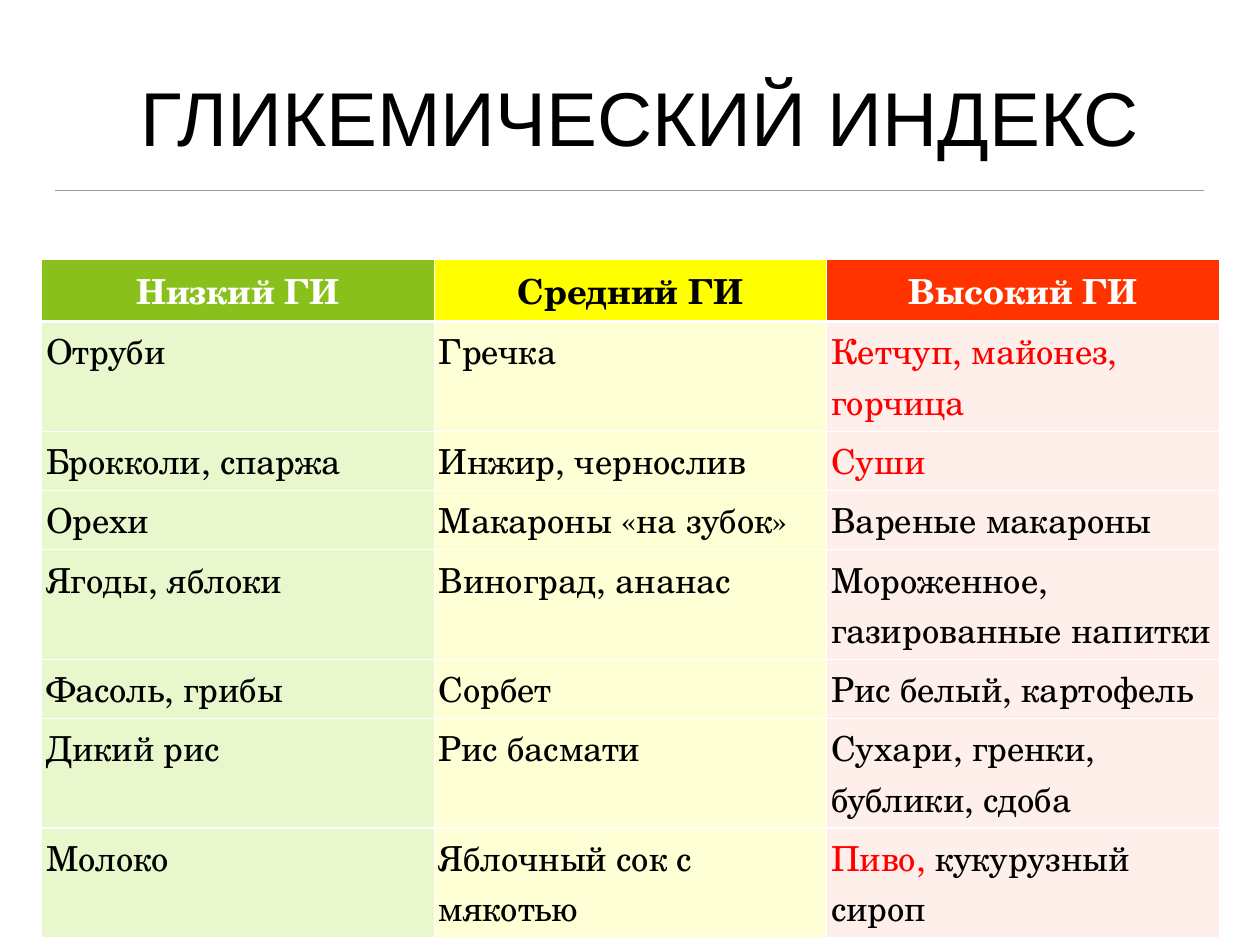
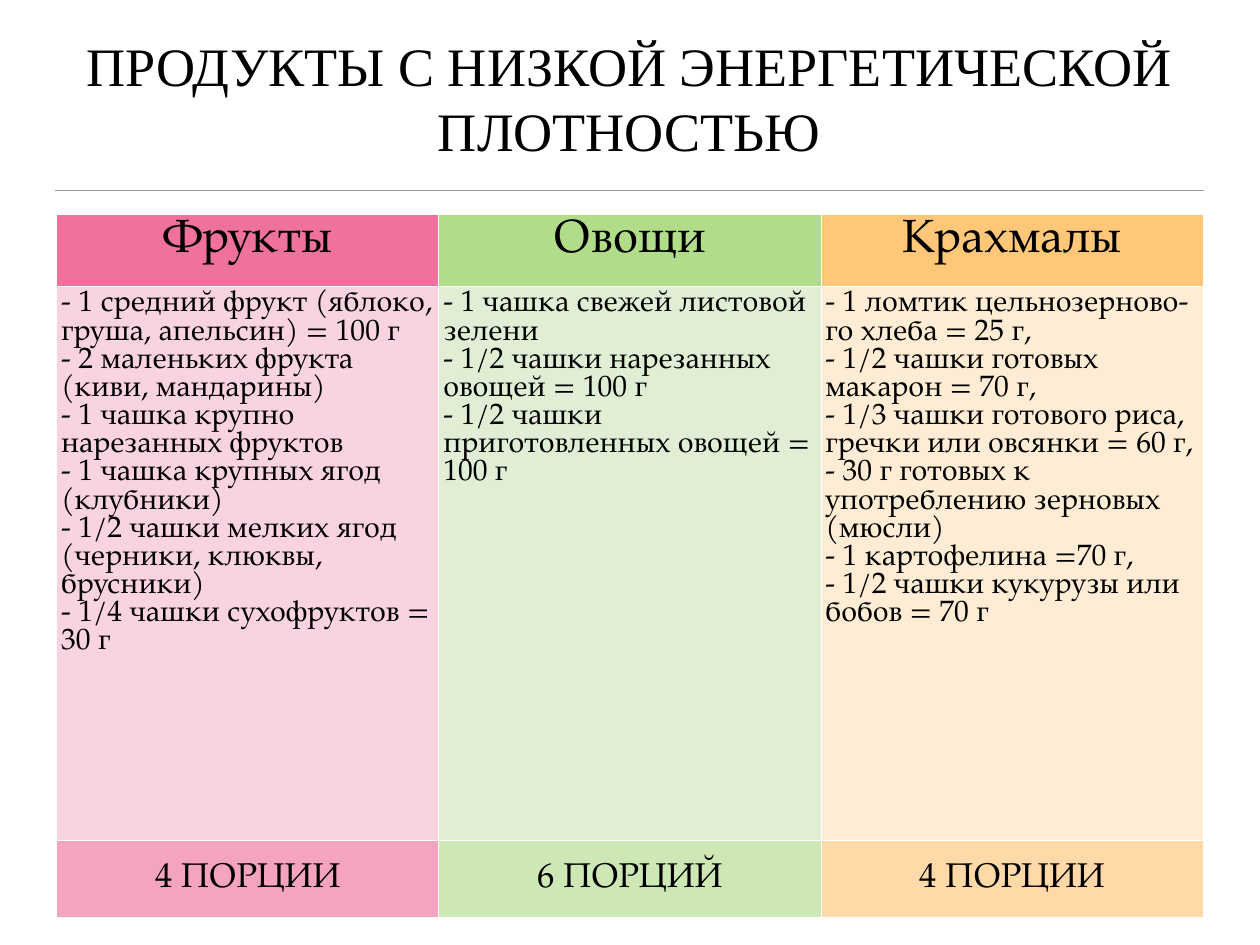
from lxml.etree import SubElement
from pptx import Presentation
from pptx.dml.color import RGBColor
from pptx.enum.shapes import MSO_CONNECTOR
from pptx.enum.text import MSO_ANCHOR, MSO_AUTO_SIZE, PP_ALIGN
from pptx.oxml.ns import qn
from pptx.util import Emu, Pt

SCALE = 9144
COLORS = {
    "black": "000000", "white": "FFFFFF", "red": "FF0000", "rule": "9A9A9A",
    "low": "89C01C", "low_pale": "E9F8CC",
    "medium": "FFFF00", "medium_pale": "FFFFD5",
    "high": "FF3300", "high_pale": "FFEFEB",
    "fruit": "EE719E", "fruit_pale": "F9D3E0", "fruit_mid": "F4A4C0",
    "vegetable": "B1DD8B", "vegetable_pale": "DFEED4", "vegetable_mid": "CDE8B5",
    "starch": "FFC777", "starch_pale": "FFECD4", "starch_mid": "FFD9A8",
}
TITLE_BOX = (62, 36, 1297, 153)
INDEX_BOX = (47, 293, 1329, 676)
PORTION_BOX = (64, 242, 1294, 794)

INDEX_HEADS = [("Низкий ГИ", "white", "low"), ("Средний ГИ", "black", "medium"),
               ("Высокий ГИ", "white", "high")]
INDEX_ROWS = [
    (109, "Отруби", "Гречка", [("Кетчуп, майонез, горчица", "red")]),
    (61, "Брокколи, спаржа", "Инжир, чернослив", [("Суши", "red")]),
    (61, "Орехи", "Макароны «на зубок»", "Вареные макароны"),
    (112, "Ягоды, яблоки", "Виноград, ананас", "Мороженное, газированные напитки"),
    (61, "Фасоль, грибы", "Сорбет", "Рис белый, картофель"),
    (112, "Дикий рис", "Рис басмати", "Сухари, гренки, бублики, сдоба"),
    (107, "Молоко", "Яблочный сок с мякотью",
     [("Пиво, ", "red"), ("кукурузный сироп", "black")]),
]
PORTION_GROUPS = [
    ("Фрукты", "fruit", "4 ПОРЦИИ", [
        "- 1 средний фрукт (яблоко, груша, апельсин) = 100 г",
        "- 2 маленьких фрукта (киви, мандарины)",
        "- 1 чашка крупно нарезанных фруктов",
        "- 1 чашка крупных ягод (клубники)",
        "- 1/2 чашки мелких ягод (черники, клюквы, брусники)",
        "- 1/4 чашки сухофруктов = 30 г",
    ]),
    ("Овощи", "vegetable", "6 ПОРЦИЙ", [
        "- 1 чашка свежей листовой зелени",
        "- 1/2 чашки нарезанных овощей = 100 г",
        "- 1/2 чашки приготовленных овощей = 100 г",
    ]),
    ("Крахмалы", "starch", "4 ПОРЦИИ", [
        "- 1 ломтик цельнозерново-го хлеба = 25 г,",
        "- 1/2 чашки готовых макарон = 70 г,",
        "- 1/3 чашки готового риса, гречки или овсянки = 60 г,",
        "- 30 г готовых к употреблению зерновых (мюсли)",
        "- 1 картофелина =70 г,",
        "- 1/2 чашки кукурузы или бобов = 70 г",
    ]),
]


def px(n):
    return Emu(n * SCALE)


def rgb(name):
    return RGBColor.from_string(COLORS[name])


def add_run(p, text, font, size, color="black", bold=False):
    r = p.add_run()
    r.text = text
    r.font.name = font
    r.font.size = Pt(size)
    r.font.bold = bold
    r.font.color.rgb = rgb(color)


def set_borders(cell, top=1, bottom=1):
    tc_pr = cell._tc.get_or_add_tcPr()
    for side, width in (("L", 1), ("R", 1), ("T", top), ("B", bottom)):
        ln = SubElement(tc_pr, qn(f"a:ln{side}"), w=str(Pt(width)))
        fill = SubElement(ln, qn("a:solidFill"))
        SubElement(fill, qn("a:srgbClr"), val=COLORS["white"])


def fill_cell(cell, paragraphs, fill, font, size, align=PP_ALIGN.LEFT,
              anchor=MSO_ANCHOR.TOP, spacing=None, bold=False, top=1, bottom=1):
    set_borders(cell, top, bottom)
    cell.fill.solid()
    cell.fill.fore_color.rgb = rgb(fill)
    cell.margin_left = cell.margin_right = cell.margin_top = cell.margin_bottom = px(5)
    cell.vertical_anchor = anchor
    tf = cell.text_frame
    for i, runs in enumerate(paragraphs):
        p = tf.add_paragraph() if i else tf.paragraphs[0]
        p.alignment = align
        if spacing:
            p.line_spacing = spacing
        for text, color in runs:
            add_run(p, text, font, size, color, bold)


def add_grid(s, box, heights, columns=3):
    x, y, w, h = box
    frame = s.shapes.add_table(len(heights), columns, px(x), px(y), px(w), px(h))
    table = frame.table
    table.first_row = table.horz_banding = False
    for column in table.columns:
        column.width = px(w) // columns
    for row, height in zip(table.rows, heights):
        row.height = px(height)
    return table


def style_layout(layout, s):
    x, y, w, h = TITLE_BOX
    title = layout.placeholders[0]
    title.left, title.top, title.width, title.height = map(px, TITLE_BOX)
    tf = title.text_frame
    tf.auto_size = MSO_AUTO_SIZE.NONE
    tf.vertical_anchor = MSO_ANCHOR.BOTTOM
    tf.margin_left = tf.margin_right = tf.margin_top = tf.margin_bottom = px(6)
    rule_y = px(y + h + 26)
    rule = s.shapes.add_connector(MSO_CONNECTOR.STRAIGHT, px(x), rule_y, px(x + w), rule_y)
    rule.line.color.rgb = rgb("rule")
    rule.line.width = Pt(1)
    SubElement(rule.element.spPr, qn("a:effectLst"))
    layout.shapes.element.append(rule.element)


def add_title(s, text, font, size):
    p = s.shapes.title.text_frame.paragraphs[0]
    p.alignment = PP_ALIGN.CENTER
    add_run(p, text, font, size)


def add_index_table(s, box):
    font = {"font": "TeX Gyre Schola", "size": 28}
    table = add_grid(s, box, [63] + [row[0] for row in INDEX_ROWS])
    for c, (head, color, fill) in enumerate(INDEX_HEADS):
        fill_cell(table.cell(0, c), [[(head, color)]], fill,
                  align=PP_ALIGN.CENTER, bold=True, bottom=3, **font)
        for i, row in enumerate(INDEX_ROWS, 1):
            food = row[c + 1]
            runs = [(food, "black")] if isinstance(food, str) else food
            fill_cell(table.cell(i, c), [runs], f"{fill}_pale",
                      top=3 if i == 1 else 1, **font)


def add_portion_table(s, box):
    style = {"font": "TeX Gyre Pagella", "spacing": 0.95}
    table = add_grid(s, box, [81, 626, 87])
    for c, (head, fill, portions, foods) in enumerate(PORTION_GROUPS):
        fill_cell(table.cell(0, c), [[(head, "black")]], fill, size=38,
                  align=PP_ALIGN.CENTER, **style)
        fill_cell(table.cell(1, c), [[(food, "black")] for food in foods],
                  f"{fill}_pale", size=24, **style)
        fill_cell(table.cell(2, c), [[(portions, "black")]], f"{fill}_mid", size=28,
                  align=PP_ALIGN.CENTER, anchor=MSO_ANCHOR.MIDDLE, **style)


def main():
    prs = Presentation()
    prs.slide_width, prs.slide_height = px(1422), px(1067)
    layout = prs.slide_layouts[5]

    s = prs.slides.add_slide(layout)
    style_layout(layout, s)
    add_title(s, " ГЛИКЕМИЧЕСКИЙ ИНДЕКС", "Arial", 62)
    add_index_table(s, INDEX_BOX)

    s = prs.slides.add_slide(layout)
    add_title(s, "ПРОДУКТЫ С НИЗКОЙ ЭНЕРГЕТИЧЕСКОЙ ПЛОТНОСТЬЮ", "Times New Roman", 44)
    add_portion_table(s, PORTION_BOX)

    prs.save("out.pptx")


if __name__ == "__main__":
    main()
